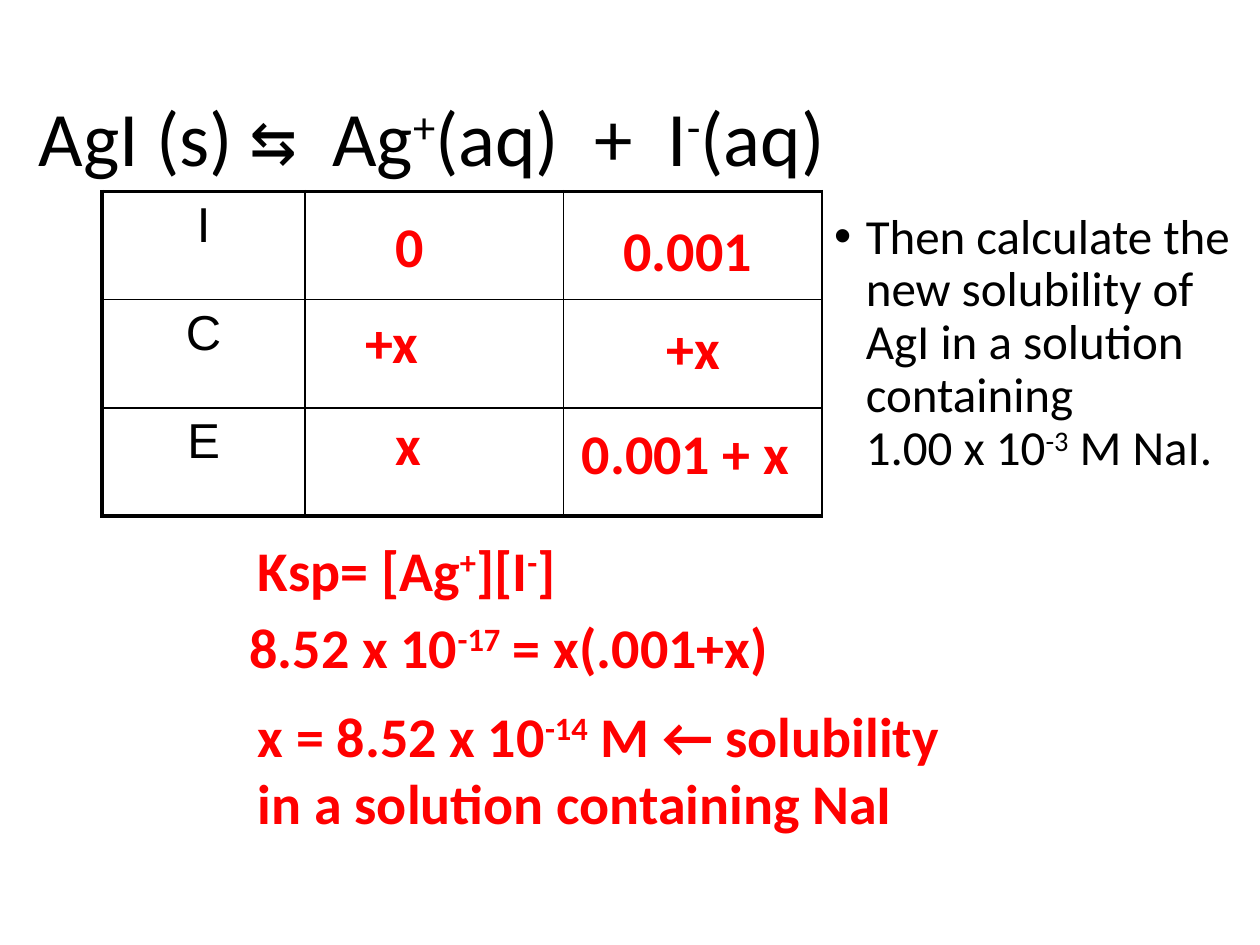
from lxml.etree import SubElement
from pptx import Presentation
from pptx.dml.color import RGBColor
from pptx.enum.text import MSO_ANCHOR, MSO_AUTO_SIZE, PP_ALIGN
from pptx.oxml.ns import qn
from pptx.util import Cm, Pt


def color(value):
    return RGBColor.from_string(value)


def write(p, pieces, size, name="Calibri", rgb="000000", bold=False):
    for piece in pieces:
        if piece == "\n":
            p.add_line_break()
            continue
        r = p.add_run()
        r.text = piece.lstrip("^")
        face = "DejaVu Sans Mono" if piece == "⇆" else name
        fmt = {"size": Pt(size), "name": face, "bold": bold}
        for key, value in fmt.items():
            setattr(r.font, key, value)
        r.font.color.rgb = color(rgb)
        rPr = r.font._element
        SubElement(rPr, qn("a:ea")).set("typeface", face)
        if piece.startswith("^"):
            rPr.set("baseline", "30000")


prs = Presentation()
prs.slide_width, prs.slide_height = Cm(25.4), Cm(19.05)
s = prs.slides.add_slide(prs.slide_layouts[1])

title, body = s.placeholders
texts = [
    (body, (16.56, 4.14, 8.84, 8.71), 28, MSO_ANCHOR.TOP, 10,
     ["Then calculate the new solubility of AgI in a solution containing ",
      "\n", "1.00 x 10", "^-3", " M NaI."]),
    (title, (0.53, 1.02, 21.89, 3.68), 44, MSO_ANCHOR.MIDDLE, 0,
     ["AgI (s) ", "⇆", "  Ag", "^+", "(aq)  +  I", "^-", "(aq)"]),
]
for sp, box, size, anchor, before, pieces in texts:
    sp.left, sp.top, sp.width, sp.height = [Cm(v) for v in box]
    tf = sp.text_frame
    fmt = {"word_wrap": True, "auto_size": MSO_AUTO_SIZE.NONE, "vertical_anchor": anchor}
    for key, value in fmt.items():
        setattr(tf, key, value)
    p = tf.paragraphs[0]
    fmt = {"alignment": PP_ALIGN.LEFT, "line_spacing": 0.9, "space_before": Pt(before)}
    for key, value in fmt.items():
        setattr(p, key, value)
    write(p, pieces, size)

pPr = body.text_frame.paragraphs[0]._p.get_or_add_pPr()
pPr.set("marL", str(Cm(0.64)))
pPr.set("indent", str(-Cm(0.64)))

table = s.shapes.add_table(3, 3, Cm(2.06), Cm(3.86), Cm(14.5), Cm(6.55)).table
table.first_row = table.horz_banding = False
for col, width in zip(table.columns, (4.09, 5.21, 5.21)):
    col.width = Cm(width)
for i, label in enumerate("ICE"):
    table.rows[i].height = Cm(2.18)
    p = table.cell(i, 0).text_frame.paragraphs[0]
    p.alignment = PP_ALIGN.CENTER
    p.space_before = Pt(5.6)
    write(p, [label], 28, "Arial")
    for j in range(3):
        cell = table.cell(i, j)
        tcPr = cell._tc.get_or_add_tcPr()
        heavy = {"L": j == 0, "R": False, "T": i == 0, "B": i == 2}
        for side, thick in heavy.items():
            ln = SubElement(tcPr, qn(f"a:ln{side}"), w=str(Pt(2.25 if thick else 1)))
            fill = SubElement(ln, qn("a:solidFill"))
            SubElement(fill, qn("a:srgbClr"), val="000000")
        cell.fill.background()

answers = [
    (7.72, 4.14, 4.37, 1.63, ["0"]),
    (12.32, 4.22, 4.37, 1.63, ["0.001"]),
    (7.11, 6.07, 4.37, 1.63, ["+x"]),
    (13.18, 6.2, 4.37, 1.63, ["+x"]),
    (7.72, 8.13, 4.37, 1.63, ["x"]),
    (11.48, 8.31, 5.51, 1.63, ["0.001 + x"]),
    (4.95, 10.67, 10.97, 1.63, ["Ksp= [Ag", "^+", "][I", "^-", "]"]),
    (4.78, 12.22, 12.22, 1.63, ["8.52 x 10", "^-17", " = x(.001+x)"]),
    (4.95, 14.02, 15.37, 3, ["x = 8.52 x 10", "^-14",
                             " M ← solubility in a solution containing NaI"]),
]
for *box, pieces in answers:
    tf = s.shapes.add_textbox(*[Cm(v) for v in box]).text_frame
    tf.word_wrap = True
    tf.auto_size = MSO_AUTO_SIZE.SHAPE_TO_FIT_TEXT
    write(tf.paragraphs[0], pieces, 32, rgb="FF0000", bold=True)

prs.save("out.pptx")
